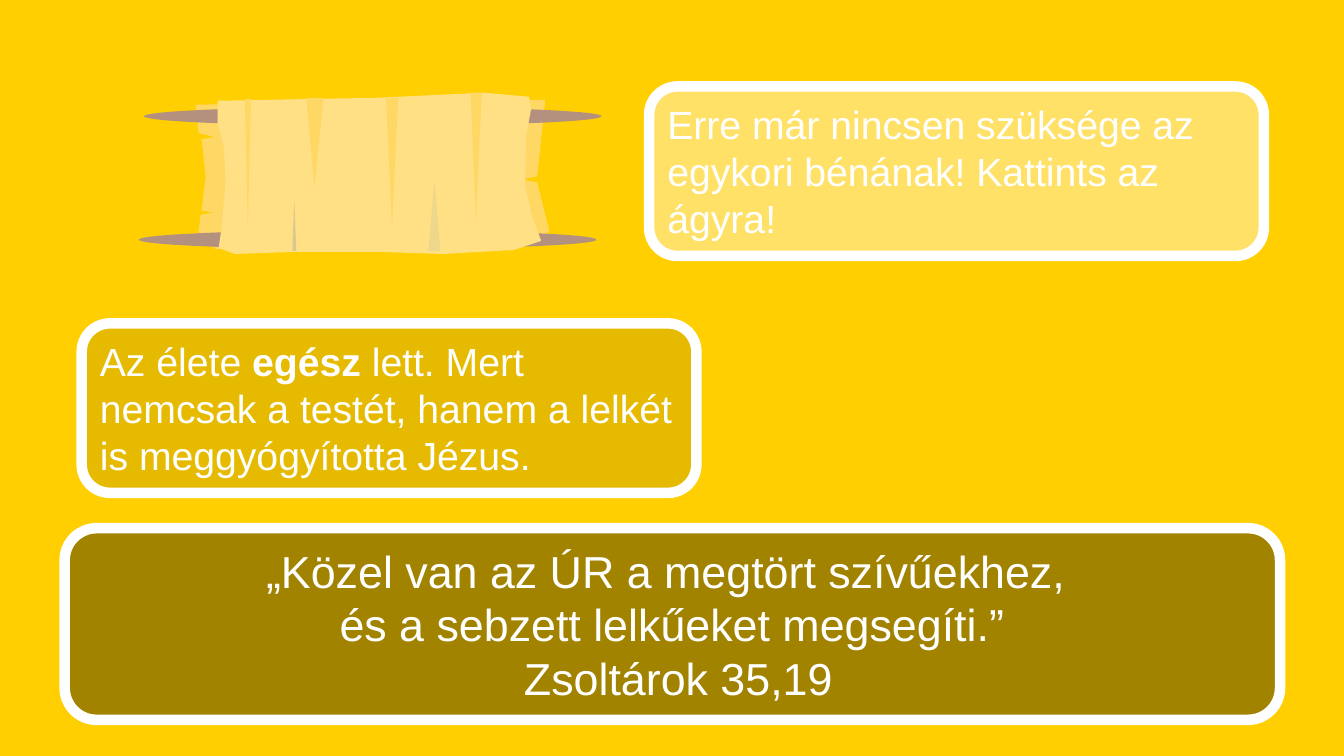
from dataclasses import dataclass

import pptx
import pptx.dml.color
import pptx.enum.shapes
import pptx.enum.text
import pptx.oxml
import pptx.oxml.ns
import pptx.shapes.autoshape
import pptx.slide
import pptx.util

Cm, Pt = pptx.util.Cm, pptx.util.Pt
RGBColor = pptx.dml.color.RGBColor
MSO_SHAPE = pptx.enum.shapes.MSO_SHAPE
PP_ALIGN = pptx.enum.text.PP_ALIGN
Shape = pptx.shapes.autoshape.Shape
Slide = pptx.slide.Slide

WHITE = RGBColor(0xFF, 0xFF, 0xFF)
YELLOW = RGBColor(0xFF, 0xCF, 0x01)
PALE_YELLOW = RGBColor(0xFF, 0xE1, 0x67)
GOLD = RGBColor(0xE6, 0xBA, 0x00)
BROWN = RGBColor(0xA2, 0x83, 0x00)
CLOTH = RGBColor(0xFF, 0xE0, 0x85)
FOLD = RGBColor(0xFF, 0xD7, 0x65)
WOOD = RGBColor(0xB4, 0x90, 0x7E)
SHADE = RGBColor(0xC4, 0xBD, 0x97)

UNIT = Cm(0.0254)  # cloth and folds are measured in hundredths of an inch
POLE_WIDTH, POLE_HEIGHT = Cm(11.53), Cm(0.48)

Point = tuple[float, float]


@dataclass
class Message:
    left: float
    top: float
    width: float
    height: float
    fill: RGBColor
    size: int
    align: PP_ALIGN
    paragraphs: list[list[str]]  # every second run is bold


@dataclass
class Fold:
    """A wedge between two corners at base, narrowing to a tip."""
    left: float
    right: float
    base: float
    tip: float
    fill: RGBColor = FOLD
    opacity: int = 100


MESSAGES = [
    Message(16.36, 2.18, 15.49, 4.27, PALE_YELLOW, 28, PP_ALIGN.LEFT,
            [["Erre már nincsen szüksége az egykori bénának! Kattints az ágyra!"]]),
    Message(1.63, 13.31, 30.63, 4.83, BROWN, 32, PP_ALIGN.CENTER,
            [["„Közel van az ÚR a megtört szívűekhez, "],
             ["és a sebzett lelkűeket megsegíti.”"],
             [" Zsoltárok 35,19"]]),
    Message(2.06, 8.15, 15.49, 4.27, GOLD, 28, PP_ALIGN.LEFT,
            [["Az élete ", "egész",
              " lett. Mert nemcsak a testét, hanem a lelkét is meggyógyította Jézus."]]),
]

BACK_CLOTH = [
    (194, 104), (361, 100), (541, 99), (533, 175), (518, 178), (533, 181),
    (545, 229), (534, 241), (214, 247), (197, 230), (199, 213), (212, 211),
    (200, 209), (204, 175), (200, 138), (213, 136), (197, 132)]
FRONT_CLOTH = [
    (216, 100), (375, 97), (480, 92), (525, 96), (527, 108), (522, 135),
    (521, 185), (528, 215), (537, 239), (510, 248), (440, 252), (378, 250),
    (290, 250), (233, 252), (217, 246), (220, 225), (224, 180), (222, 145), (216, 122)]
POLES = [(3.5, 2.69), (3.63, 5.56 - 2.87)][:0] or [(3.63, 2.69), (3.5, 5.8)]
FOLDS = [
    Fold(243, 249, 98, 227), Fold(304, 321, 97, 186),
    Fold(383, 395, 97, 225), Fold(467, 478, 92, 221),
    Fold(290, 294, 249, 198, SHADE, 63), Fold(425, 437, 249, 180, SHADE, 28),
]


def paint(shape: Shape, fill: RGBColor) -> None:
    shape.shadow.inherit = False
    shape.fill.solid()
    shape.fill.fore_color.rgb = fill
    shape.line.fill.background()


def draw_polygon(slide: Slide, points: list[Point], fill: RGBColor) -> Shape:
    builder = slide.shapes.build_freeform(*points[0], scale=1 / UNIT * UNIT * UNIT)
    builder.add_line_segments(points[1:], close=True)
    shape = builder.convert_to_shape()
    paint(shape, fill)
    return shape


def draw_pole(slide: Slide, left: float, top: float) -> Shape:
    shape = slide.shapes.add_shape(
        MSO_SHAPE.OVAL, Cm(left), Cm(top), POLE_WIDTH, POLE_HEIGHT)
    paint(shape, WOOD)
    return shape


def draw_fold(slide: Slide, fold: Fold) -> Shape:
    middle = (fold.left + fold.right) / 2
    corners = [(fold.left, fold.base), (fold.right, fold.base), (middle, fold.tip)]
    shape = draw_polygon(slide, corners, fold.fill)
    if fold.opacity < 100:
        color = shape._element.spPr.find(".//" + pptx.oxml.ns.qn("a:srgbClr"))
        color.append(pptx.oxml.parse_xml(
            f'<a:alpha {pptx.oxml.ns.nsdecls("a")} val="{fold.opacity * 1000}"/>'))
    return shape


def draw_stretcher(slide: Slide) -> None:
    parts = [draw_polygon(slide, BACK_CLOTH, FOLD)]
    parts += [draw_pole(slide, left, top) for left, top in POLES]
    parts.append(draw_polygon(slide, FRONT_CLOTH, CLOTH))
    parts += [draw_fold(slide, fold) for fold in FOLDS]
    slide.shapes.add_group_shape(parts)


def draw_message(slide: Slide, message: Message) -> None:
    shape = slide.shapes.add_shape(
        MSO_SHAPE.ROUNDED_RECTANGLE,
        Cm(message.left), Cm(message.top), Cm(message.width), Cm(message.height))
    paint(shape, message.fill)
    shape.line.color.rgb = WHITE
    shape.line.width = Pt(7.5)
    text_frame = shape.text_frame
    text_frame.word_wrap = True
    text_frame.auto_size = pptx.enum.text.MSO_AUTO_SIZE.SHAPE_TO_FIT_TEXT
    text_frame.vertical_anchor = pptx.enum.text.MSO_ANCHOR.MIDDLE
    text_frame.text = "\n".join(runs[0] for runs in message.paragraphs)
    for paragraph, runs in zip(text_frame.paragraphs, message.paragraphs):
        paragraph.alignment = message.align
        for text in runs[1:]:
            paragraph.add_run().text = text
        for index, run in enumerate(paragraph.runs):
            run.font.name = "Arial"
            run.font.size = Pt(message.size)
            run.font.bold = index % 2 == 1
            run.font.color.rgb = WHITE


def main() -> None:
    presentation = pptx.Presentation()
    presentation.slide_width, presentation.slide_height = Cm(33.87), Cm(19.05)
    slide = presentation.slides.add_slide(presentation.slide_layouts[6])
    # Background
    slide.background.fill.solid()
    slide.background.fill.fore_color.rgb = YELLOW
    # Messages and stretcher
    for message in MESSAGES:
        draw_message(slide, message)
    draw_stretcher(slide)
    presentation.save("out.pptx")


if __name__ == "__main__":
    main()
